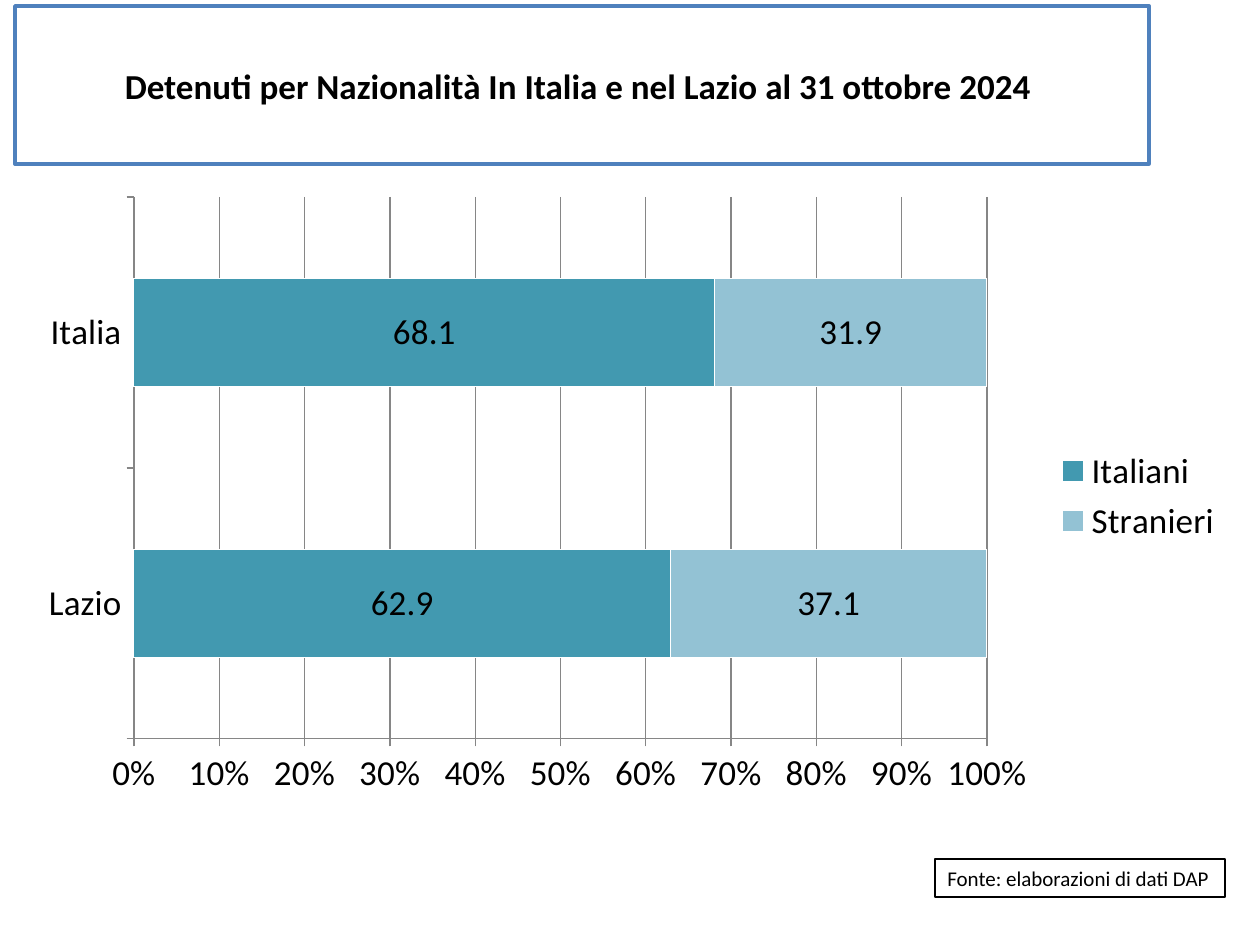
from lxml import etree
from pptx import Presentation
from pptx import util as u
from pptx.chart.data import CategoryChartData
from pptx.dml.color import RGBColor
from pptx.enum import chart as charts, shapes, text
from pptx.oxml import parse_xml
from pptx.oxml.ns import nsdecls, qn

SCALE = 914400 / 126
COLORS = {
    "white": "FFFFFF",
    "black": "000000",
    "frame": "4F81BD",
    "italiani": "4299B0",
    "stranieri": "93C2D4",
    "grid": "868686",
}


def px(*lengths):
    return [u.Emu(round(length * SCALE)) for length in lengths]


def color(name):
    return RGBColor.from_string(COLORS[name])


def format_font(font, size, bold=False):
    font.name = "Calibri"
    font.size = u.Pt(size)
    font.bold = bold
    font.color.rgb = color("black")


def write_text(frame, content, size, bold=False, align=text.PP_ALIGN.LEFT, wrap=True):
    frame.word_wrap = wrap
    frame.auto_size = text.MSO_AUTO_SIZE.NONE
    frame.vertical_anchor = text.MSO_ANCHOR.MIDDLE
    paragraph = frame.paragraphs[0]
    paragraph.alignment = align
    run = paragraph.add_run()
    run.text = content
    format_font(run.font, size, bold)


class SlideBuilder:
    def __init__(self, presentation):
        self.slide = presentation.slides.add_slide(presentation.slide_layouts[5])

    def frame(self, shape, line, width):
        shape.fill.solid()
        shape.fill.fore_color.rgb = color("white")
        shape.line.color.rgb = color(line)
        shape.line.width = u.Pt(width)

    def title(self, content, box):
        shape = self.slide.shapes.title
        shape.left, shape.top, shape.width, shape.height = px(*box)
        self.frame(shape, "frame", 2)
        write_text(shape.text_frame, content, 20, bold=True, align=text.PP_ALIGN.CENTER)

    def source(self, content, box):
        shape = self.slide.shapes.add_shape(shapes.MSO_SHAPE.RECTANGLE, *px(*box))
        shape.shadow.inherit = False
        self.frame(shape, "black", 0.75)
        write_text(shape.text_frame, content, 12, wrap=False)

    def bar_chart(self, categories, series, box, plot_box):
        data = CategoryChartData(number_format="0.0")
        data.categories = categories
        for name, values in series.items():
            data.add_series(name, values)
        chart = self.slide.shapes.add_chart(
            charts.XL_CHART_TYPE.BAR_STACKED_100, *px(*box), data
        ).chart
        format_font(chart.font, 20)
        chart.has_title = False
        chart.has_legend = True
        chart.legend.position = charts.XL_LEGEND_POSITION.RIGHT
        chart.legend.include_in_layout = False
        plot = chart.plots[0]
        plot.gap_width = 150
        plot.overlap = 100
        plot.vary_by_categories = False
        for bars in plot.series:
            bars.format.fill.solid()
            bars.format.fill.fore_color.rgb = color(bars.name.lower())
            bars.format.line.color.rgb = color("white")
            labels = bars.data_labels
            labels.show_value = True
            labels.position = charts.XL_LABEL_POSITION.CENTER
            labels.number_format = "0.0"
            labels.number_format_is_linked = False
            format_font(labels.font, 20)
        for axis in (chart.category_axis, chart.value_axis):
            axis.major_tick_mark = charts.XL_TICK_MARK.OUTSIDE
            axis.minor_tick_mark = charts.XL_TICK_MARK.NONE
            axis.format.line.color.rgb = color("grid")
            format_font(axis.tick_labels.font, 20)
        axis = chart.value_axis
        axis.minimum_scale, axis.maximum_scale, axis.major_unit = 0, 1, 0.1
        axis.has_major_gridlines = True
        axis.major_gridlines.format.line.color.rgb = color("grid")
        axis.tick_labels.number_format = "0%"
        axis.tick_labels.number_format_is_linked = False
        self.place_plot(chart, box, plot_box)

    def place_plot(self, chart, box, plot_box):
        left, top, width, height = box
        plot_left, plot_top, plot_width, plot_height = plot_box
        layout = parse_xml(f"<c:layout {nsdecls('c')}><c:manualLayout/></c:layout>")
        settings = {
            "layoutTarget": "inner",
            "xMode": "edge",
            "yMode": "edge",
            "x": (plot_left - left) / width,
            "y": (plot_top - top) / height,
            "w": plot_width / width,
            "h": plot_height / height,
        }
        for tag, value in settings.items():
            etree.SubElement(layout[0], qn(f"c:{tag}")).set("val", str(value))
        area = chart.element.find(f".//{qn('c:plotArea')}")
        for previous in area.findall(qn("c:layout")):
            area.remove(previous)
        area.insert(0, layout)


def main():
    presentation = Presentation()
    presentation.slide_width, presentation.slide_height = px(1260, 945)
    builder = SlideBuilder(presentation)
    builder.title(
        "Detenuti per Nazionalità In Italia e nel Lazio al 31 ottobre 2024 ",
        (15, 6, 1134, 158),
    )
    builder.source("Fonte: elaborazioni di dati DAP", (935, 859, 290, 38))
    builder.bar_chart(
        ("Lazio", "Italia"),
        {"Italiani": (62.9, 68.1), "Stranieri": (37.1, 31.9)},
        box=(25, 185, 1211, 622),
        plot_box=(134, 197, 853, 542),
    )
    presentation.save("out.pptx")


if __name__ == "__main__":
    main()
